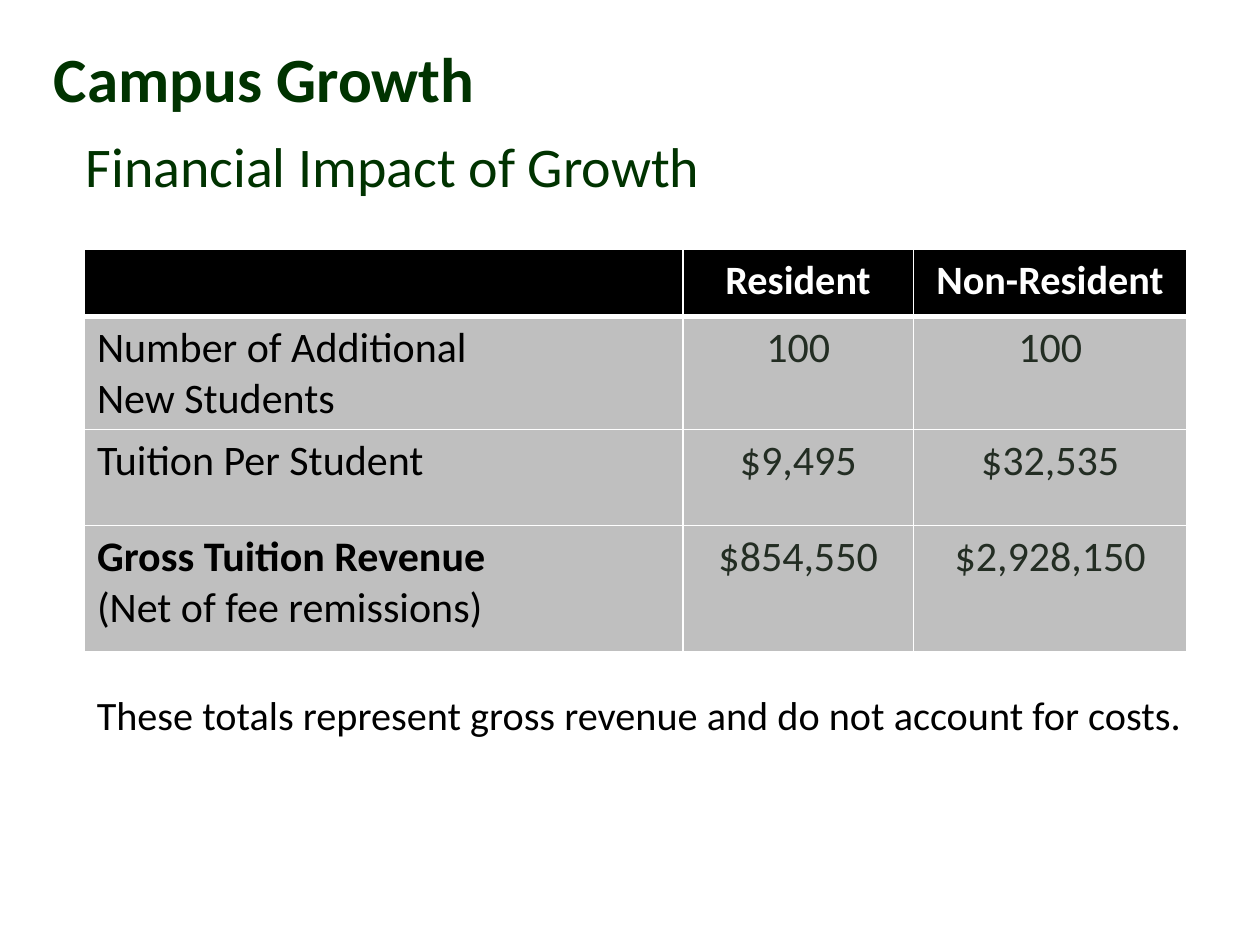
from lxml import etree
from pptx import Presentation
from pptx.dml.color import RGBColor
from pptx.enum import text
from pptx.oxml import ns
from pptx.util import Inches, Pt

FONT = "Calibri"
GREEN, BLACK, WHITE = "003300", "000000", "FFFFFF"
GREY, FIGURE = "BFBFBF", "232D23"

COLUMN_WIDTHS = [4.75, 1.83, 2.17]
ROW_HEIGHTS = [0.53, 0.86, 0.76, 1.0]
ROWS = [
    ["", "Resident", "Non-Resident"],
    ["Number of Additional \nNew Students", "100", "100"],
    ["Tuition Per Student", "$9,495", "$32,535"],
    ["Gross Tuition Revenue\n(Net of fee remissions)", "$854,550", "$2,928,150"],
]


def color(hex_value):
    return RGBColor.from_string(hex_value)


def style(paragraph, size, hex_value, bold=False, align=text.PP_ALIGN.LEFT):
    paragraph.alignment = align
    for run in paragraph.runs:
        run.font.name = FONT
        run.font.size = Pt(size)
        run.font.bold = bold
        run.font.color.rgb = color(hex_value)


def add_text(slide, words, box, size, hex_value, bold=False,
             anchor=text.MSO_ANCHOR.MIDDLE):
    frame = slide.shapes.add_textbox(*map(Inches, box)).text_frame
    frame.word_wrap = True
    frame.vertical_anchor = anchor
    frame.text = words
    style(frame.paragraphs[0], size, hex_value, bold)


def add_borders(cell, bottom_width):
    properties = cell._tc.get_or_add_tcPr()
    for side, width in (("L", 1), ("R", 1), ("T", 1), ("B", bottom_width)):
        line = etree.SubElement(properties, ns.qn(f"a:ln{side}"), w=str(Pt(width)))
        fill = etree.SubElement(line, ns.qn("a:solidFill"))
        etree.SubElement(fill, ns.qn("a:srgbClr"), val=WHITE)


def fill_cell(cell, words, row, column):
    header = row == 0
    add_borders(cell, 3 if header else 1)
    cell.fill.solid()
    cell.fill.fore_color.rgb = color(BLACK if header else GREY)
    cell.text = words
    align = text.PP_ALIGN.CENTER if column else text.PP_ALIGN.LEFT
    for paragraph in cell.text_frame.paragraphs:
        if header:
            style(paragraph, 23, WHITE, True, align)
        else:
            bold = paragraph.text == "Gross Tuition Revenue"
            style(paragraph, 24, FIGURE if column else BLACK, bold, align)


def add_tuition_table(slide):
    table = slide.shapes.add_table(
        len(ROWS), len(COLUMN_WIDTHS), Inches(0.67), Inches(1.98),
        Inches(sum(COLUMN_WIDTHS)), Inches(sum(ROW_HEIGHTS))).table
    for column, width in zip(table.columns, COLUMN_WIDTHS):
        column.width = Inches(width)
    for row, height in zip(table.rows, ROW_HEIGHTS):
        row.height = Inches(height)
    for r, entries in enumerate(ROWS):
        for c, words in enumerate(entries):
            fill_cell(table.cell(r, c), words, r, c)


def main():
    deck = Presentation()
    deck.slide_width, deck.slide_height = Inches(10), Inches(7.5)
    slide = deck.slides.add_slide(deck.slide_layouts[6])

    # Headings
    add_text(slide, "Campus Growth", (0.33, 0, 9.42, 1.22), 36, GREEN, bold=True)
    add_text(slide, "Financial Impact of Growth", (0.58, 0.7, 9.42, 1.22), 32, GREEN)

    # Tuition revenue and its caveat
    add_tuition_table(slide)
    add_text(slide, "These totals represent gross revenue and do not account for costs.",
             (0.67, 5.43, 8.83, 0.49), 23, BLACK, anchor=text.MSO_ANCHOR.TOP)

    deck.save("out.pptx")


if __name__ == "__main__":
    main()
